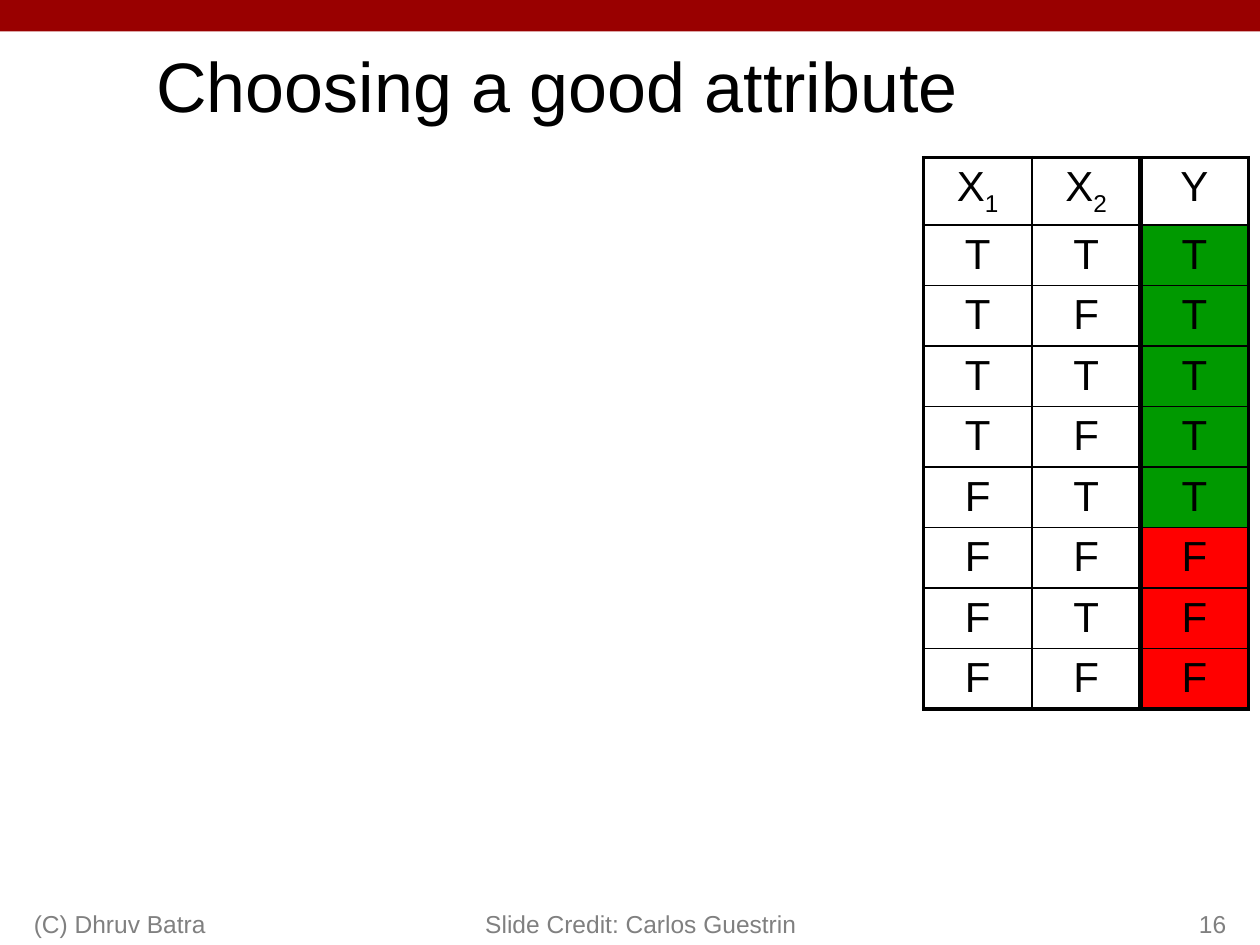
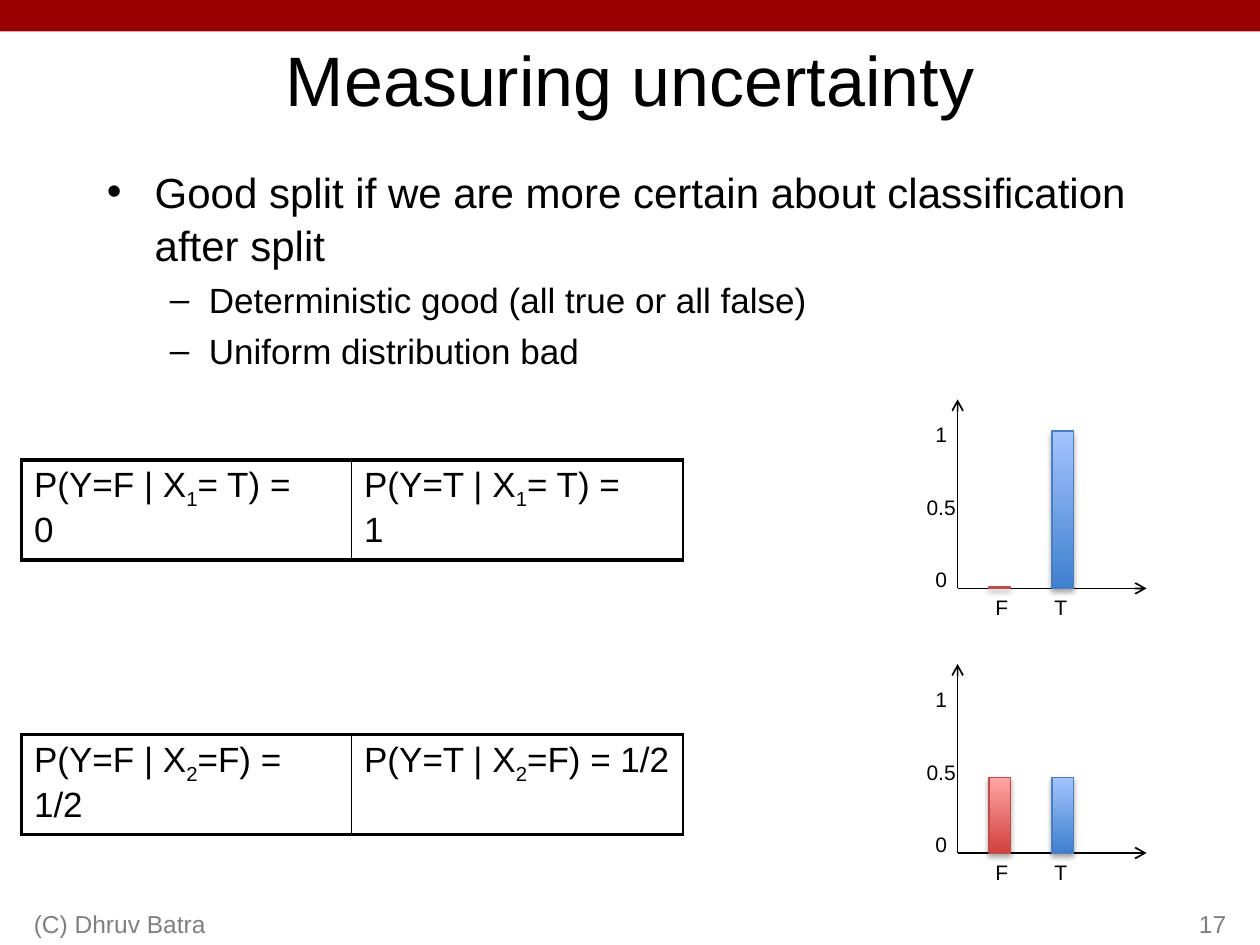
from lxml import etree
from pptx import Presentation
from pptx.dml.color import RGBColor
from pptx.enum.shapes import MSO_CONNECTOR, MSO_SHAPE
from pptx.enum.text import MSO_ANCHOR, PP_ALIGN
from pptx.oxml.ns import qn
from pptx.util import Inches, Pt

RECT = MSO_SHAPE.RECTANGLE
STRAIGHT = MSO_CONNECTOR.STRAIGHT
LEFT, CENTER, RIGHT = PP_ALIGN.LEFT, PP_ALIGN.CENTER, PP_ALIGN.RIGHT
TOP, MIDDLE, BOTTOM = MSO_ANCHOR.TOP, MSO_ANCHOR.MIDDLE, MSO_ANCHOR.BOTTOM

BLACK = RGBColor(0x00, 0x00, 0x00)
GRAY = RGBColor(0x80, 0x80, 0x80)
BAND_RED = RGBColor(0x99, 0x00, 0x00)
TRUE_GREEN = RGBColor(0x00, 0x99, 0x00)
FALSE_RED = RGBColor(0xFF, 0x00, 0x00)
BLUE_BAR = (RGBColor(0x3F, 0x80, 0xCE), RGBColor(0xA4, 0xC4, 0xFF), RGBColor(0x4B, 0x7E, 0xBC))
RED_BAR = (RGBColor(0xD1, 0x40, 0x3C), RGBColor(0xFF, 0xA6, 0xA5), RGBColor(0xBF, 0x4C, 0x48))

FONT = "Arial"
BAR_WIDTH = 0.17


def sub(parent, tag, **attrs):
    return etree.SubElement(parent, qn(tag), attrs)


def add_runs(p, text, size, color=BLACK):
    """Underscores enclose subscripts; newlines become line breaks."""
    for i, part in enumerate(text.split("_")):
        for j, line in enumerate(part.split("\n")):
            if j:
                p.add_line_break()
            r = p.add_run()
            r.text = line
            r.font.name = FONT
            r.font.size = Pt(size)
            r.font.color.rgb = color
            if i % 2:
                r.font._element.set("baseline", "-25000")


def add_text(s, box, lines, size, align=LEFT, anchor=TOP, color=BLACK, wrap=True, gap=0):
    tf = s.shapes.add_textbox(*map(Inches, box)).text_frame
    tf.word_wrap = wrap
    tf.vertical_anchor = anchor
    for i, line in enumerate(lines):
        p = tf.add_paragraph() if i else tf.paragraphs[0]
        p.alignment = align
        p.space_before = Pt(gap if i else 0)
        add_runs(p, line, size, color)
    return tf


def add_frame(prs, title, title_box, number):
    s = prs.slides.add_slide(prs.slide_layouts[6])
    band = s.shapes.add_shape(RECT, 0, 0, prs.slide_width, Inches(0.25))
    band.shadow.inherit = False
    band.fill.solid()
    band.fill.fore_color.rgb = BAND_RED
    band.line.fill.background()
    add_text(s, title_box, [title], 40, CENTER, MIDDLE)
    add_footer(s, 0.17, 3.17, "(C) Dhruv Batra", LEFT)
    add_footer(s, 7.75, 2.08, str(number), RIGHT)
    return s


def add_footer(s, left, width, text, align):
    add_text(s, (left, 7, width, 0.5), [text], 14, align, BOTTOM, GRAY)


def set_borders(cell, **widths):
    tcPr = cell._tc.get_or_add_tcPr()
    for side in "LRTB":
        ln = sub(tcPr, f"a:ln{side}", w=str(Pt(widths[side])))
        sub(sub(ln, "a:solidFill"), "a:srgbClr", val=str(BLACK))


def add_grid(s, left, top, cols, rows, texts, size, align, v_lines, h_lines, fills=None):
    table = s.shapes.add_table(len(rows), len(cols), Inches(left), Inches(top),
                               Inches(sum(cols)), Inches(sum(rows))).table
    table.first_row = table.horz_banding = False
    for c, width in enumerate(cols):
        table.columns[c].width = Inches(width)
    for r, height in enumerate(rows):
        table.rows[r].height = Inches(height)
        for c, text in enumerate(texts[r]):
            cell = table.cell(r, c)
            cell.margin_bottom = Inches(0.03)
            p = cell.text_frame.paragraphs[0]
            p.alignment = align
            add_runs(p, text, size)
            set_borders(cell, L=v_lines[c], R=v_lines[c + 1], T=h_lines[r], B=h_lines[r + 1])
            fill = (fills or {}).get((r, c))
            if fill is None:
                cell.fill.background()
            else:
                cell.fill.solid()
                cell.fill.fore_color.rgb = fill


def add_bullets(s, box, items):
    tf = add_text(s, box, [text for _, text in items], 24)
    styles = [("•", 0.38, 0.38, 24, 0), ("–", 0.81, 0.31, 20, 4)]
    for p, (level, _) in zip(tf.paragraphs, items):
        mark, margin, hang, size, gap = styles[level]
        p.level = level
        p.line_spacing = 1.05
        p.space_before = Pt(gap)
        p.runs[0].font.size = Pt(size)
        pPr = p._p.get_or_add_pPr()
        pPr.set("marL", str(Inches(margin)))
        pPr.set("indent", str(-Inches(hang)))
        sub(pPr, "a:buFont", typeface=FONT)
        sub(pPr, "a:buChar", char=mark)


def add_axis(s, x, y, end_x, end_y):
    axis = s.shapes.add_connector(STRAIGHT, *map(Inches, (x, y, end_x, end_y)))
    axis.line.color.rgb = BLACK
    axis.line.width = Pt(1)
    spPr = axis._element.spPr
    sub(spPr.find(qn("a:ln")), "a:tailEnd", type="arrow")
    sub(spPr, "a:effectLst")


def add_bar(s, x, base, height, colors):
    dark, light, edge = colors
    bar = s.shapes.add_shape(RECT, Inches(x), Inches(base - height),
                             Inches(BAR_WIDTH), Inches(height))
    bar.fill.gradient()
    bar.fill.gradient_angle = 90
    for stop, color in zip(bar.fill.gradient_stops, (dark, light)):
        stop.color.rgb = color
    bar.line.color.rgb = edge
    bar.line.width = Pt(0.75)
    bar.shadow.inherit = False
    effects = bar._element.spPr.find(qn("a:effectLst"))
    shadow = sub(effects, "a:outerShdw", blurRad=str(Pt(3.1)), dist=str(Pt(1.8)),
                 dir="5400000", rotWithShape="0")
    sub(sub(shadow, "a:srgbClr", val=str(BLACK)), "a:alpha", val="35000")


def add_distribution(s, base, false_height, true_height):
    x = 7.6
    add_axis(s, x, base, x, base - 1.5)
    add_axis(s, x, base, x + 1.5, base)
    add_text(s, (7.25, base - 1.37, 0.44, 1.51), ["1", "0.5", "0"], 12, CENTER, wrap=False, gap=27)
    add_bar(s, 8.35, base, true_height, BLUE_BAR)
    add_bar(s, 7.85, base, false_height, RED_BAR)
    for label, center in (("F", 7.95), ("T", 8.42)):
        add_text(s, (center - 0.15, base, 0.3, 0.3), [label], 12, CENTER, wrap=False)


def add_attribute_slide(prs):
    s = add_frame(prs, "Choosing a good attribute", (-0.08, -0.08, 9, 1.5), 16)
    samples = ["TTT", "TFT", "TTT", "TFT", "FTT", "FFF", "FTF", "FFF"]
    fills = {(r, 2): TRUE_GREEN if row[2] == "T" else FALSE_RED
             for r, row in enumerate(samples, 1)}
    add_grid(s, 7.33, 1.25, [0.86] * 3, [0.52] + [0.47] * len(samples),
             [["X_1_", "X_2_", "Y"], *samples], 24, CENTER,
             [2.25, 1, 3, 2.25], [2.25] + [1] * len(samples) + [2.25], fills)
    add_footer(s, 3.5, 2.92, "Slide Credit: Carlos Guestrin", RIGHT)


def add_uncertainty_slide(prs):
    s = add_frame(prs, "Measuring uncertainty", (0.75, 0.25, 8.5, 0.75), 17)
    add_bullets(s, (0.75, 1.25, 8.5, 5.75), [
        (0, "Good split if we are more certain about classification after split"),
        (1, "Deterministic good (all true or all false)"),
        (1, "Uniform distribution bad"),
    ])
    splits = [
        (3.65, ["P(Y=F | X_1_= T) = \n0", "P(Y=T | X_1_= T) = \n1"], 4.67, 0.01, 1.25),
        (5.83, ["P(Y=F | X_2_=F) = 1/2", "P(Y=T | X_2_=F) = 1/2"], 6.77, 0.6, 0.6),
    ]
    for top, odds, base, false_height, true_height in splits:
        add_grid(s, 0.17, top, [2.62, 2.63], [0.77], [odds], 20, LEFT,
                 [2.25, 1, 1], [2.25, 2.25])
        add_distribution(s, base, false_height, true_height)


def main():
    prs = Presentation()
    prs.slide_width = Inches(10)
    prs.slide_height = Inches(7.5)
    add_attribute_slide(prs)
    add_uncertainty_slide(prs)
    prs.save("out.pptx")


if __name__ == "__main__":
    main()
